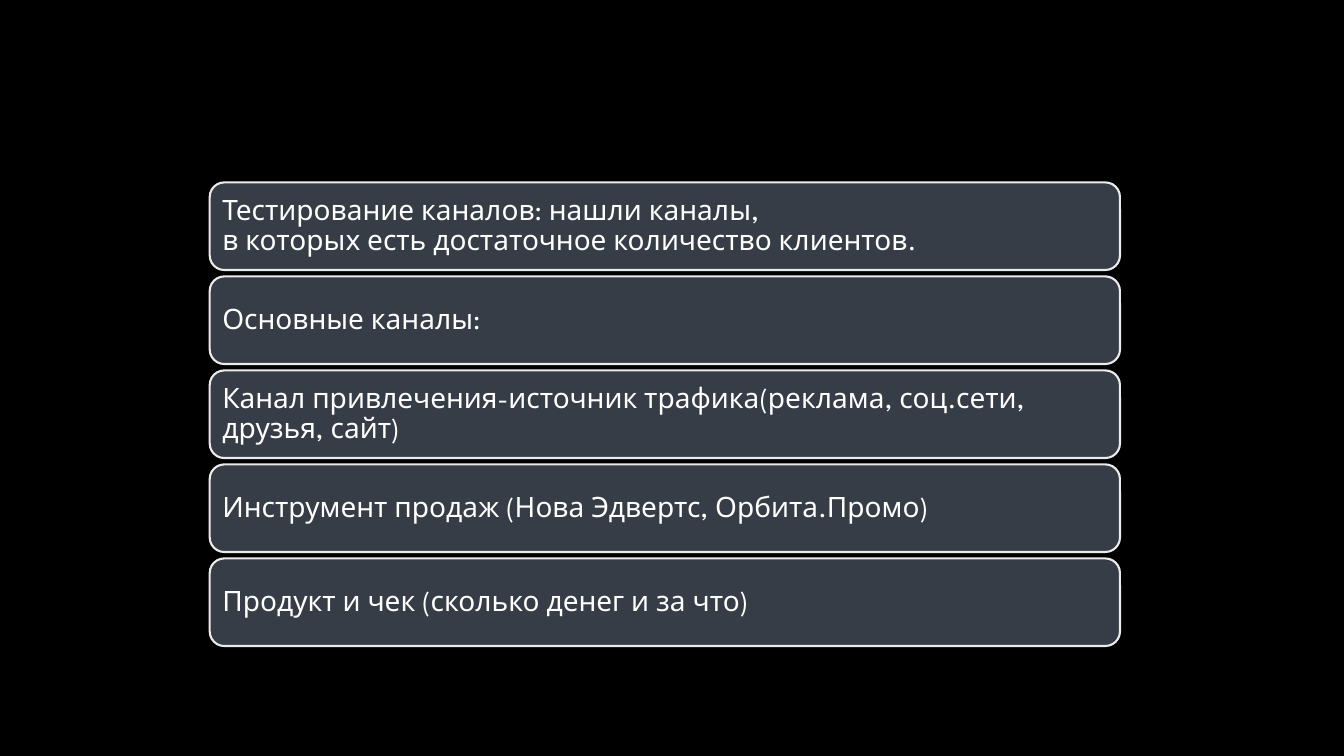
from pptx import Presentation
from pptx.dml.color import RGBColor
from pptx.enum.shapes import MSO_SHAPE as Shape
from pptx.enum.text import MSO_ANCHOR as Anchor, PP_ALIGN as Align
from pptx.util import Pt


def color(hex_value):
    return RGBColor.from_string(hex_value)


class ChannelSlide:
    FONT, SIZE = "League Spartan", 20
    BACKGROUND, PANEL, BORDER, TEXT = "000000", "363D46", "EBEBEB", "FFFFFF"

    def __init__(self, slide):
        self.slide = slide
        fill = slide.background.fill
        fill.solid()
        fill.fore_color.rgb = color(self.BACKGROUND)

    def panel(self, left, top, width, height, lines):
        """Add a rounded panel whose lines form one paragraph."""
        panel = self.slide.shapes.add_shape(
            Shape.ROUNDED_RECTANGLE, Pt(left), Pt(top), Pt(width), Pt(height))
        panel.shadow.inherit = False
        panel.fill.solid()
        panel.fill.fore_color.rgb = color(self.PANEL)
        panel.line.color.rgb = color(self.BORDER)
        panel.line.width = Pt(1.5)

        frame = panel.text_frame
        frame.word_wrap = True
        frame.vertical_anchor = Anchor.MIDDLE
        frame.margin_left = frame.margin_right = Pt(6)
        frame.margin_top = frame.margin_bottom = Pt(6)
        paragraph = frame.paragraphs[0]
        paragraph.alignment = Align.LEFT
        paragraph.line_spacing = 0.9
        for index, line in enumerate(lines):
            if index:
                paragraph.add_line_break()
            self.run(paragraph, line)

    def run(self, paragraph, text):
        run = paragraph.add_run()
        run.text = text
        run.font.name = self.FONT
        run.font.size = Pt(self.SIZE)
        run.font.color.rgb = color(self.TEXT)


STEPS = [
    ["Тестирование каналов: нашли каналы, ",
     "в которых есть достаточное количество клиентов."],
    ["Основные каналы:"],
    ["Канал привлечения-источник трафика(реклама, соц.сети, друзья, сайт)"],
    ["Инструмент продаж (Нова Эдвертс, Орбита.Промо)"],
    ["Продукт и чек (сколько денег и за что)"],
]
LEFT, TOP, WIDTH, HEIGHT, GAP = 149.8, 130.3, 650.2, 62.6, 4.55


def main():
    deck = Presentation()
    deck.slide_width, deck.slide_height = Pt(960), Pt(540)
    blank_layout = deck.slide_layouts[6]
    channels = ChannelSlide(deck.slides.add_slide(blank_layout))
    for row, lines in enumerate(STEPS):
        channels.panel(LEFT, TOP + row * (HEIGHT + GAP), WIDTH, HEIGHT, lines)
    deck.save("out.pptx")


if __name__ == "__main__":
    main()
